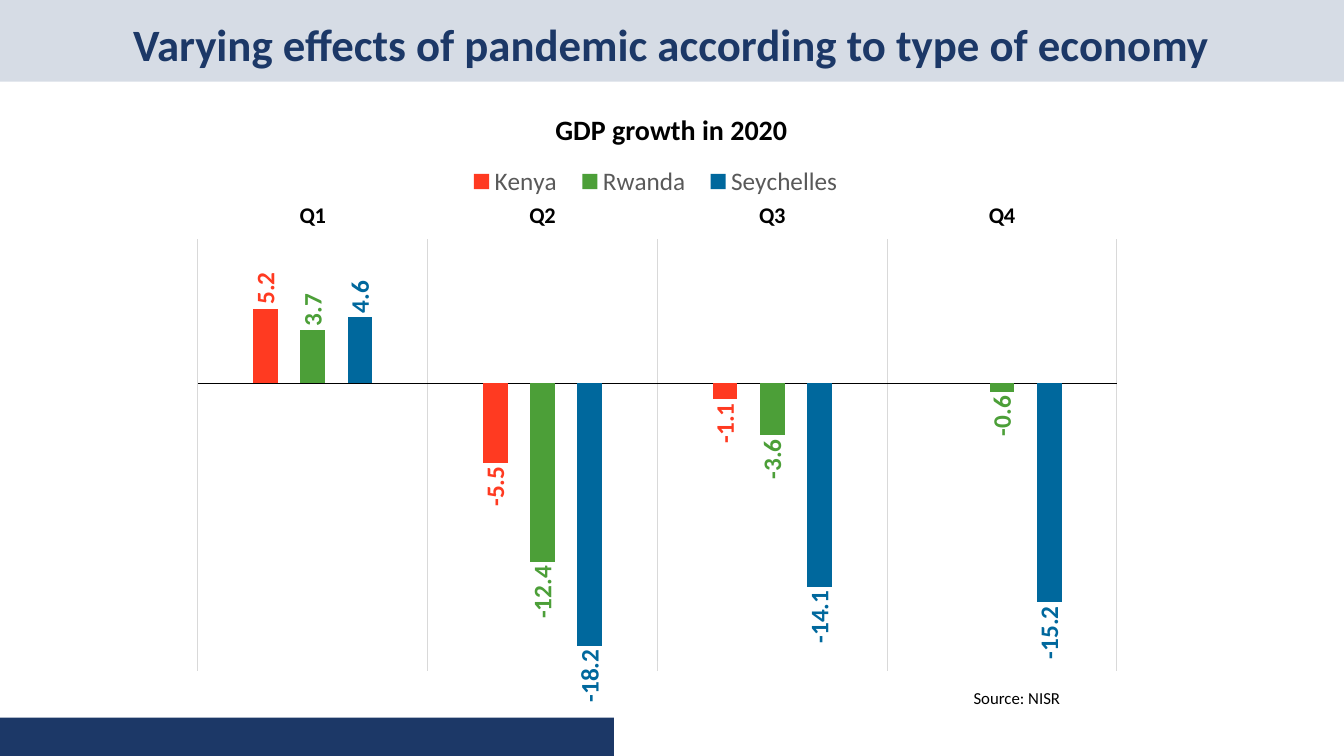
"""Build the slide comparing 2020 GDP growth in three African economies."""
from dataclasses import dataclass

import lxml.etree
import pptx
import pptx.chart.chart
import pptx.chart.data
import pptx.dml.color
import pptx.enum.chart
import pptx.enum.shapes
import pptx.enum.text
import pptx.oxml.ns
import pptx.slide
import pptx.util

Pt = pptx.util.Pt
PP_ALIGN = pptx.enum.text.PP_ALIGN
ANCHOR = pptx.enum.text.MSO_ANCHOR


@dataclass(frozen=True)
class Theme:
    font: str = "Calibri"
    navy: str = "1C3867"
    band: str = "D6DCE5"
    black: str = "000000"
    legend: str = "595959"
    grid: str = "D9D9D9"
    title_size: float = 32
    heading_size: float = 20
    label_size: float = 18
    quarter_size: float = 16
    source_size: float = 12


@dataclass(frozen=True)
class Box:
    left: float
    top: float
    width: float
    height: float

    def lengths(self) -> tuple[int, ...]:
        return tuple(Pt(v) for v in (self.left, self.top, self.width, self.height))


@dataclass(frozen=True)
class Country:
    name: str
    color: str
    growth: tuple[float | None, ...]


THEME = Theme()
QUARTERS = ("Q1", "Q2", "Q3", "Q4")
COUNTRIES = (
    Country("Kenya", "FF3A21", (5.2, -5.5, -1.1, None)),
    Country("Rwanda", "4C9F38", (3.7, -12.4, -3.6, -0.6)),
    Country("Seychelles", "00689D", (4.6, -18.2, -14.1, -15.2)),
)
BANDS = (
    (Box(0, 0, 960, 58.3), THEME.band),
    (Box(0, 512.6, 438.5, 27.4), THEME.navy),
)


def rgb(color: str) -> pptx.dml.color.RGBColor:
    return pptx.dml.color.RGBColor.from_string(color)


def set_font(font, size: float, color: str, bold: bool = False) -> None:
    font.name, font.size, font.bold = THEME.font, Pt(size), bold
    font.color.rgb = rgb(color)


def add_band(s: pptx.slide.Slide, box: Box, color: str) -> None:
    sp = s.shapes.add_shape(pptx.enum.shapes.MSO_SHAPE.RECTANGLE, *box.lengths())
    sp.shadow.inherit = False
    sp.fill.solid()
    sp.fill.fore_color.rgb = rgb(color)
    sp.line.fill.background()


def add_text(s: pptx.slide.Slide, text: str, box: Box, *, size: float,
             color: str = THEME.black, bold: bool = False,
             align: PP_ALIGN = PP_ALIGN.LEFT, anchor: ANCHOR = ANCHOR.TOP,
             spacing: float = 1.0) -> None:
    tf = s.shapes.add_textbox(*box.lengths()).text_frame
    tf.word_wrap = True
    tf.vertical_anchor = anchor
    p = tf.paragraphs[0]
    p.alignment, p.line_spacing = align, spacing
    r = p.add_run()
    r.text = text
    set_font(r.font, size, color, bold)


def make_layout(target: str | None, **fractions: float):
    qn = pptx.oxml.ns.qn
    layout = lxml.etree.Element(qn("c:layout"))
    manual = lxml.etree.SubElement(layout, qn("c:manualLayout"))
    modes = {"xMode": "edge", "yMode": "edge"}
    if target:
        modes = {"layoutTarget": target, **modes}
    for tag, value in {**modes, **fractions}.items():
        lxml.etree.SubElement(manual, qn(f"c:{tag}")).set("val", str(value))
    return layout


def place_parts(chart: pptx.chart.chart.Chart) -> None:
    root = chart._chartSpace
    for old in root.xpath("c:chart/c:plotArea/c:layout | c:chart/c:legend/c:layout"):
        old.getparent().remove(old)
    root.xpath("c:chart/c:plotArea")[0].insert(
        0, make_layout("inner", x=0.026, y=0.164, w=0.972, h=0.775))
    root.xpath("c:chart/c:legend/c:legendPos")[0].addnext(
        make_layout(None, x=0.3, y=0.02, w=0.42, h=0.08))


def format_axes(chart: pptx.chart.chart.Chart) -> None:
    enum = pptx.enum.chart
    quarters, growth = chart.category_axis, chart.value_axis
    growth.minimum_scale, growth.maximum_scale = -20, 10
    growth.has_major_gridlines = False
    growth.visible = False
    quarters.tick_label_position = enum.XL_TICK_LABEL_POSITION.HIGH
    quarters.major_tick_mark = enum.XL_TICK_MARK.NONE
    quarters.has_major_gridlines = True
    for line, color in ((quarters.format.line, THEME.black),
                        (quarters.major_gridlines.format.line, THEME.grid)):
        line.color.rgb = rgb(color)
        line.width = Pt(0.75)
    set_font(quarters.tick_labels.font, THEME.quarter_size, THEME.black, True)


def format_series(series, country: Country) -> None:
    series.invert_if_negative = False
    series.format.fill.solid()
    series.format.fill.fore_color.rgb = rgb(country.color)
    labels = series.data_labels
    labels.show_value = True
    labels.position = pptx.enum.chart.XL_LABEL_POSITION.OUTSIDE_END
    labels.number_format, labels.number_format_is_linked = "0.0", False
    set_font(labels.font, THEME.label_size, country.color, True)
    body = series._element.xpath("c:dLbls/c:txPr/a:bodyPr")[0]
    body.set("rot", "-5400000")
    body.set("vert", "horz")


def add_growth_chart(s: pptx.slide.Slide, box: Box) -> None:
    data = pptx.chart.data.CategoryChartData()
    data.categories = QUARTERS
    for country in COUNTRIES:
        data.add_series(country.name, country.growth)
    chart = s.shapes.add_chart(
        pptx.enum.chart.XL_CHART_TYPE.COLUMN_CLUSTERED, *box.lengths(), data).chart
    chart.has_title = False
    set_font(chart.font, 11, THEME.black)
    chart.has_legend = True
    chart.legend.position = pptx.enum.chart.XL_LEGEND_POSITION.TOP
    chart.legend.include_in_layout = False
    set_font(chart.legend.font, THEME.label_size, THEME.legend)
    plot = chart.plots[0]
    plot.gap_width, plot.overlap, plot.vary_by_categories = 444, -90, False
    format_axes(chart)
    for series, country in zip(plot.series, COUNTRIES):
        format_series(series, country)
    place_parts(chart)


def main() -> None:
    prs = pptx.Presentation()
    prs.slide_width, prs.slide_height = Pt(960), Pt(540)
    s = prs.slides.add_slide(prs.slide_layouts[6])
    for box, color in BANDS:
        add_band(s, box, color)
    add_text(s, "Varying effects of pandemic according to type of economy",
             Box(28.8, 10.8, 901.4, 46.1), size=THEME.title_size, color=THEME.navy,
             bold=True, align=PP_ALIGN.CENTER, anchor=ANCHOR.MIDDLE, spacing=0.9)
    add_growth_chart(s, Box(123.8, 105.8, 675.4, 398.2))
    add_text(s, "GDP growth in 2020", Box(376.6, 77, 205.9, 31.7),
             size=THEME.heading_size, bold=True, align=PP_ALIGN.CENTER)
    add_text(s, "Source: NISR", Box(688.3, 487.4, 187.9, 21.6), size=THEME.source_size)
    prs.save("out.pptx")


if __name__ == "__main__":
    main()
